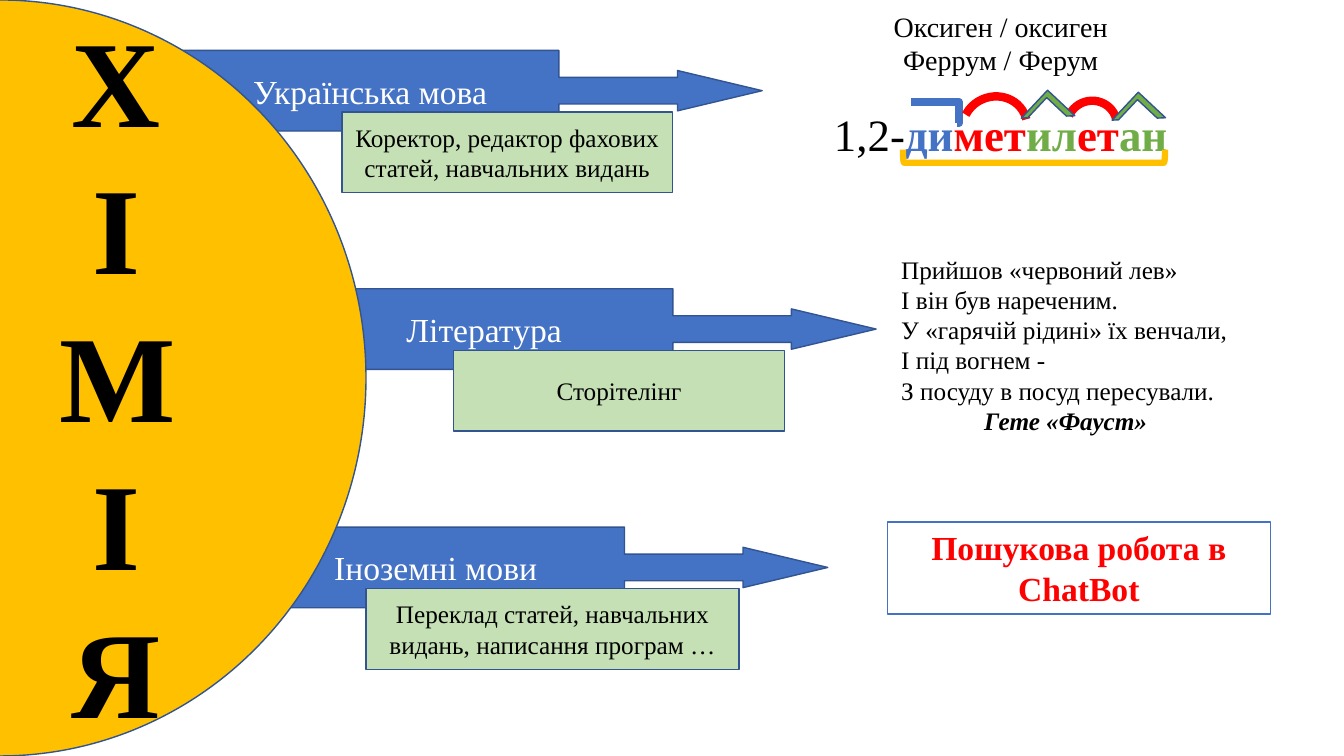
"""Build a slide linking chemistry with language, literature and foreign languages."""
import pptx
import pptx.util
import pptx.dml.color
import pptx.enum.shapes
import pptx.enum.text
import pptx.oxml
import lxml.etree

Inches = pptx.util.Inches
Pt = pptx.util.Pt
SHAPE = pptx.enum.shapes.MSO_SHAPE
ALIGN = pptx.enum.text.PP_ALIGN
ANCHOR = pptx.enum.text.MSO_ANCHOR
FONT = "Times New Roman"
BLUE, DARK_BLUE, RED, GREEN, GOLD = "4472C4", "325491", "FF0000", "70AD47", "FFC000"
PALE_GREEN, BLACK, WHITE = "C5E0B4", "000000", "FFFFFF"


def color(value):
    return pptx.dml.color.RGBColor.from_string(value)


def add_item(kind, box, fill=None, line=DARK_BLUE, width=1, lines=(), size=18,
             ink=BLACK, bold=False, anchor=ANCHOR.MIDDLE, align=ALIGN.CENTER):
    bounds = [Inches(length) for length in box]
    if kind is None:
        shape = slide.shapes.add_textbox(*bounds)
    else:
        shape = slide.shapes.add_shape(kind, *bounds)
        shape.shadow.inherit = False
        shape.line.color.rgb = color(line)
        shape.line.width = Pt(width)
        if fill:
            shape.fill.solid()
            shape.fill.fore_color.rgb = color(fill)
        else:
            shape.fill.background()
    frame = shape.text_frame
    frame.word_wrap = True
    frame.vertical_anchor = anchor
    for index, text in enumerate(lines):
        paragraph = frame.add_paragraph() if index else frame.paragraphs[0]
        paragraph.text = text
        paragraph.alignment = align
        paragraph.font.name = FONT
        paragraph.font.size = Pt(size)
        paragraph.font.bold = bold
        paragraph.font.color.rgb = color(ink)
    return shape


presentation = pptx.Presentation()
presentation.slide_width = Inches(13.33)
presentation.slide_height = Inches(7.5)
slide = presentation.slides.add_slide(presentation.slide_layouts[6])

subjects = [
    ("Українська мова", 1.8, "Коректор, редактор фахових статей, навчальних видань", 3.39, 3.28),
    ("Література", 2.93, "Сторітелінг", 4.5, 3.28),
    ("Іноземні мови", 2.45, "Переклад статей, навчальних видань, написання програм …", 3.63, 3.7),
]
first_top, row_pitch = 0.5, 2.365

for row, (subject, left, skill, skill_left, skill_width) in enumerate(subjects):
    callout = add_item(SHAPE.RIGHT_ARROW_CALLOUT, (left, first_top + row * row_pitch, 5.76, 0.8),
                       BLUE, lines=[subject], size=24, ink=WHITE)
    for index, value in enumerate((0.33, 0.25, 1.05, 0.65)):
        callout.adjustments[index] = value

add_item(SHAPE.OVAL, (-3.63, 0, 7.26, 7.5), GOLD)
add_item(None, (0.49, -0.01, 1.32, 7.51), lines="ХІМІЯ", size=88, bold=True, anchor=ANCHOR.TOP)

for row, (subject, left, skill, skill_left, skill_width) in enumerate(subjects):
    add_item(SHAPE.FLOWCHART_PROCESS,
             (skill_left, first_top + 0.61 + row * row_pitch, skill_width, 0.8),
             PALE_GREEN, lines=[skill])

terms = add_item(None, (7.56, 0.04, 4.73, 1.62), lines=["Оксиген / оксиген", "Феррум / Ферум", ""],
                 size=20, anchor=ANCHOR.TOP)
formula = terms.text_frame.paragraphs[-1]
formula.space_before = Pt(21.6)
formula.font.size = Pt(32)
morphemes = [("1,2-", BLACK), ("ди", BLUE), ("мет", RED), ("ил", GREEN), ("ет", RED), ("ан", GREEN)]
for text, ink in morphemes:
    run = formula.add_run()
    run.text = text
    run.font.bold = ink != BLACK
    run.font.color.rgb = color(ink)

prefix_mark = slide.shapes.add_connector(pptx.enum.shapes.MSO_CONNECTOR.ELBOW,
                                         Inches(9.04), Inches(1.01), Inches(9.49), Inches(1.22))
prefix_mark.line.color.rgb = color(BLUE)
prefix_mark.line.width = Pt(6)
properties = prefix_mark._element.spPr
lxml.etree.SubElement(properties, pptx.oxml.ns.qn("a:effectLst"))
guides = properties.find(".//" + pptx.oxml.ns.qn("a:avLst"))
lxml.etree.SubElement(guides, pptx.oxml.ns.qn("a:gd"), name="adj1", fmla="val 104300")

for box in ((9.54, 0.96, 0.65, 0.61), (10.58, 1, 0.5, 0.49)):
    root_mark = add_item(SHAPE.ARC, box, line=RED, width=6)
    root_mark.rotation = 335.4
    root_mark.adjustments[0] = 137.1
    root_mark.adjustments[1] = 6.07

for left, top in ((10.21, 0.97), (11.11, 0.99)):
    suffix_mark = add_item(SHAPE.HALF_FRAME, (left, top, 0.37, 0.38), GREEN)
    suffix_mark.rotation = 43.2
    suffix_mark.adjustments[0] = 0.16
    suffix_mark.adjustments[1] = 0.12

stem_mark = add_item(SHAPE.RIGHT_BRACKET, (10.19, 0.25, 0.13, 2.6), line=GOLD, width=4.5)
stem_mark.rotation = 90

verse = [
    "Прийшов «червоний лев»",
    "І він був нареченим.",
    "У «гарячій рідині» їх венчали,",
    "І під вогнем -",
    "З посуду в посуд пересували.",
    "Гете «Фауст»",
]
poem = add_item(None, (8.84, 2.47, 3.46, 1.92), lines=verse, anchor=ANCHOR.TOP, align=ALIGN.LEFT)
author = poem.text_frame.paragraphs[-1]
author.alignment = ALIGN.CENTER
author.font.bold = True
author.font.italic = True

add_item(SHAPE.RECTANGLE, (8.8, 5.18, 3.8, 0.91), WHITE, BLUE,
         lines=["Пошукова робота в ChatBot"], size=24, ink=RED, bold=True, anchor=ANCHOR.TOP)

presentation.save("out.pptx")
